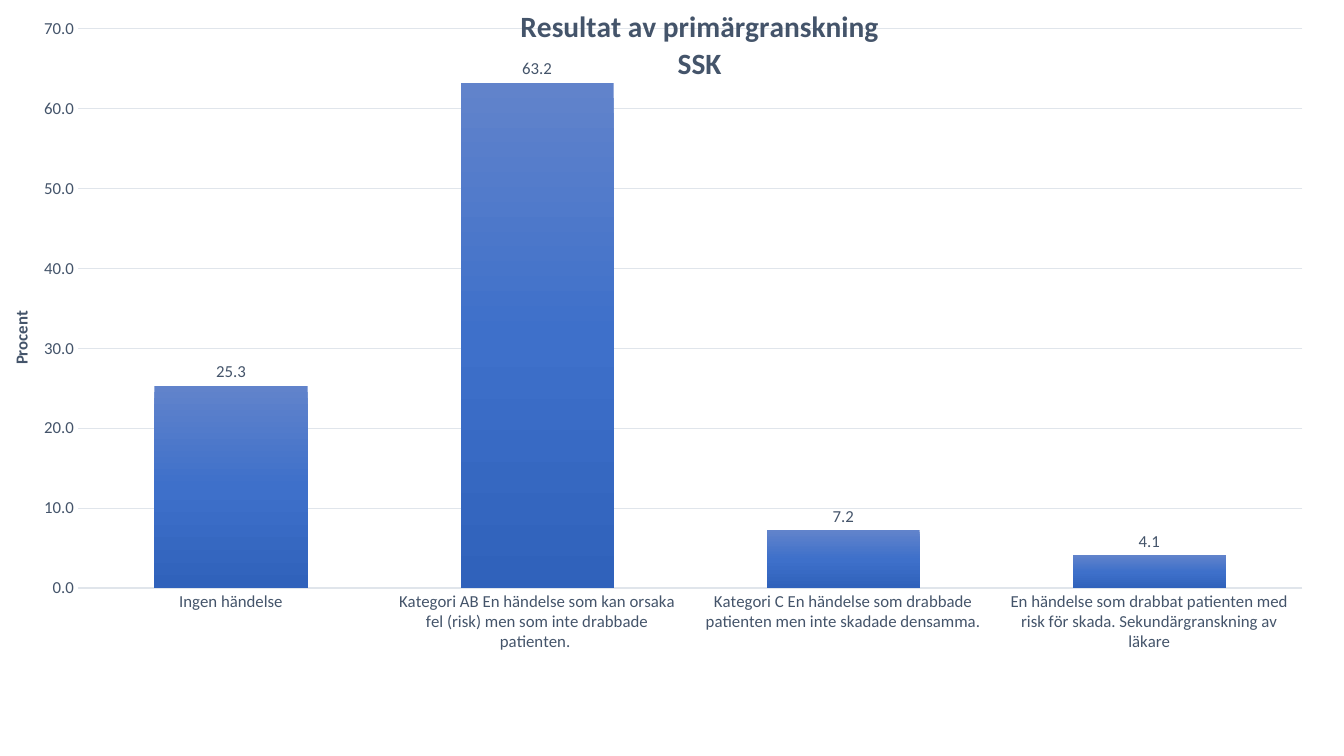
"""Build a slide with a column chart of the primary review results for SSK."""
from lxml import etree
from pptx import Presentation
from pptx.chart import data as chart_data
from pptx.dml import color
from pptx.enum import chart as ch
from pptx.oxml import ns
from pptx.util import Inches, Pt


def rgb(value):
    return color.RGBColor.from_string(value)


def place(parent, index, **position):
    for old in parent.findall(ns.qn("c:layout")):
        parent.remove(old)
    layout = etree.Element(ns.qn("c:layout"))
    manual = etree.SubElement(layout, ns.qn("c:manualLayout"))
    for key, value in position.items():
        etree.SubElement(manual, ns.qn("c:" + key), val=str(value))
    parent.insert(index, layout)


TEXT, GRID = "44546A", "E0E5EB"
shares = {
    "Ingen händelse": 25.3,
    "Kategori AB En händelse som kan orsaka fel (risk) men som inte drabbade patienten. ": 63.2,
    "Kategori C En händelse som drabbade patienten men inte skadade densamma.": 7.2,
    "En händelse som drabbat patienten med risk för skada. Sekundärgranskning av läkare": 4.1,
}

deck = Presentation()
deck.slide_width, deck.slide_height = Inches(13.33), Inches(7.5)
slide = deck.slides.add_slide(deck.slide_layouts[6])

review = chart_data.CategoryChartData(number_format="0.0")
review.categories = list(shares)
review.add_series("Series 1", list(shares.values()))
chart = slide.shapes.add_chart(
    ch.XL_CHART_TYPE.COLUMN_CLUSTERED, 0, 0, deck.slide_width, deck.slide_height, review
).chart
chart.has_legend = False
chart.font.name, chart.font.size = "Calibri", Pt(10)
place(chart._chartSpace.chart.plotArea, 0, layoutTarget="inner", xMode="edge", yMode="edge",
      x=0.058, y=0.038, w=0.911, h=0.74)

columns = chart.plots[0]
columns.gap_width, columns.overlap, columns.vary_by_categories = 100, -24, False
columns.has_data_labels = True
labels = columns.data_labels
labels.show_value = True
labels.position = ch.XL_LABEL_POSITION.OUTSIDE_END

categories, percent = chart.category_axis, chart.value_axis
for axis in (categories, percent):
    axis.major_tick_mark = axis.minor_tick_mark = ch.XL_TICK_MARK.NONE
percent.minimum_scale, percent.maximum_scale, percent.major_unit = 0, 70, 10
percent.format.line.fill.background()
percent.has_major_gridlines = True
for line in (categories.format.line, percent.major_gridlines.format.line):
    line.color.rgb, line.width = rgb(GRID), Pt(0.75)
for numbers in (labels, percent.tick_labels):
    numbers.number_format, numbers.number_format_is_linked = "0.0", False

fill = columns.series[0].format.fill
fill.gradient()
fill.gradient_angle = 270
stops = columns.series[0]._element.find(".//" + ns.qn("a:gsLst"))
for stop in list(stops):
    stops.remove(stop)
for percent_down, shade in ((0, "6183CB"), (50, "3E70CA"), (100, "3062BB")):
    stop = etree.SubElement(stops, ns.qn("a:gs"), pos=str(percent_down * 1000))
    etree.SubElement(stop, ns.qn("a:srgbClr"), val=shade)

fonts = [(labels.font, 12, False), (categories.tick_labels.font, 12, False),
         (percent.tick_labels.font, 12, False)]
for heading, wording, size, left, top in (
    (chart.chart_title, "Resultat av primärgranskning\nSSK", 21, 0.385, 0.006),
    (percent.axis_title, "Procent", 12, 0.005, 0.407),
):
    heading.text_frame.text = wording
    fonts += [(paragraph.runs[0].font, size, True) for paragraph in heading.text_frame.paragraphs]
    place(heading._element, 1, xMode="edge", yMode="edge", x=left, y=top)
chart.chart_title._element.find(ns.qn("c:overlay")).set("val", "1")

for font, size, bold in fonts:
    for name, value in {"name": "Calibri", "size": Pt(size), "bold": bold}.items():
        setattr(font, name, value)
    font.color.rgb = rgb(TEXT)

deck.save("out.pptx")
